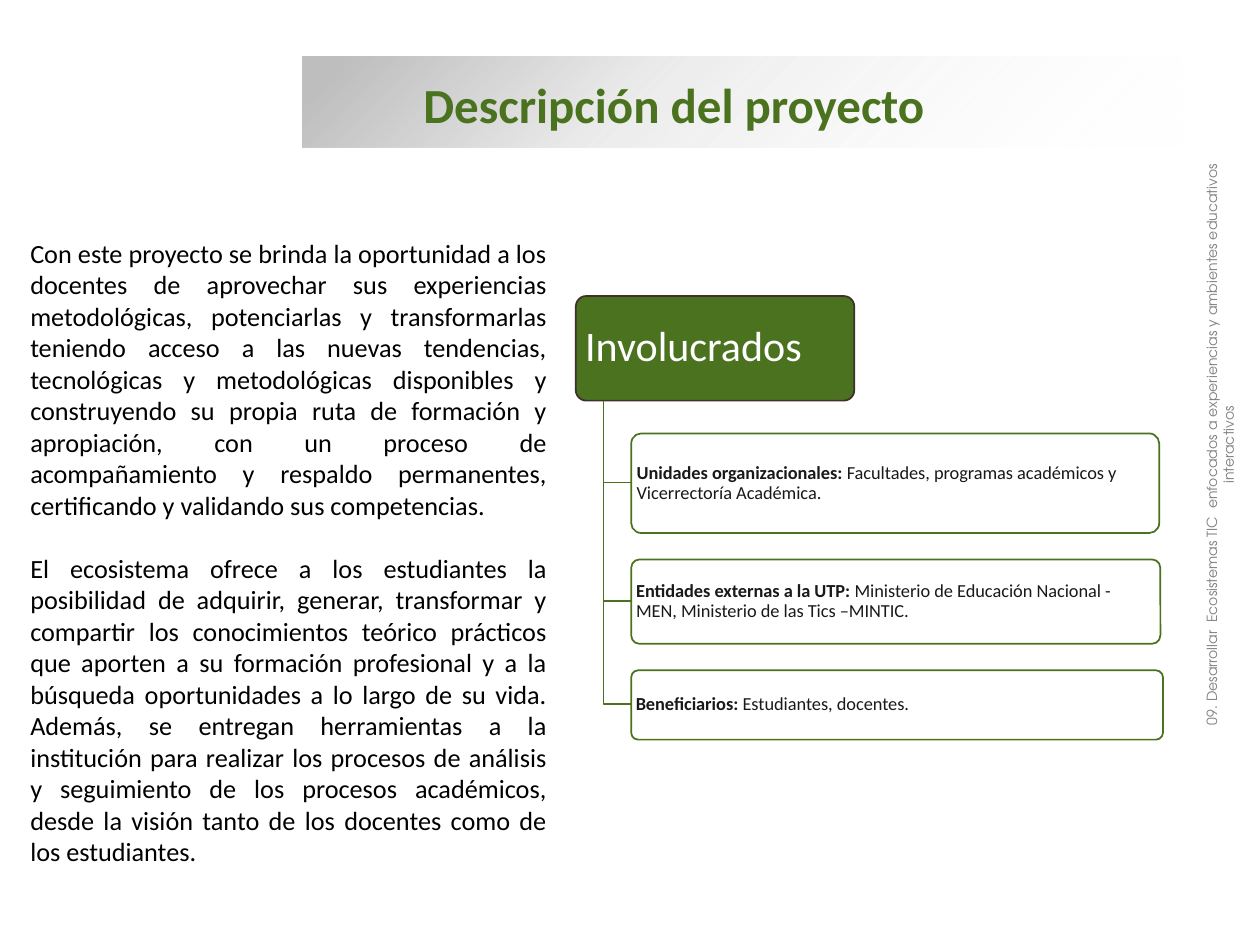
from lxml.etree import SubElement
from pptx import Presentation
from pptx.dml.color import RGBColor
from pptx.enum.shapes import MSO_SHAPE
from pptx.enum.text import MSO_ANCHOR, PP_ALIGN
from pptx.oxml import parse_xml
from pptx.oxml.ns import nsdecls, qn
from pptx.util import Pt

PX = 9144  # 100 px to the inch
COLORS = {"green": "4B731F", "brown": "3F3029", "white": "FFFFFF", "black": "000000",
          "ink": "191919", "gray": "808080", "silver": "BFBFBF"}

BODY = [
    "Con este proyecto se brinda la oportunidad a los docentes de aprovechar sus experiencias "
    "metodológicas, potenciarlas y transformarlas teniendo acceso a las nuevas tendencias, "
    "tecnológicas y metodológicas disponibles y construyendo su propia ruta de formación y "
    "apropiación, con un proceso de acompañamiento y respaldo permanentes, certificando y "
    "validando sus competencias.",
    "El ecosistema ofrece a los estudiantes la posibilidad de adquirir, generar, transformar y "
    "compartir los conocimientos teórico prácticos que aporten a su formación profesional y a la "
    "búsqueda oportunidades a lo largo de su vida. Además, se entregan herramientas a la "
    "institución para realizar los procesos de análisis y seguimiento de los procesos académicos, "
    "desde la visión tanto de los docentes como de los estudiantes.",
]
# label, detail, width, height
GROUPS = [
    ("Unidades organizacionales: ",
     "Facultades, programas académicos y Vicerrectoría Académica.", 419, 79),
    ("Entidades externas a la UTP: ",
     "Ministerio de Educación Nacional - MEN, Ministerio de las Tics –MINTIC.", 420, 67),
    ("Beneficiarios: ", "Estudiantes, docentes.", 422, 55),
]
SIDE_TEXT = ("09. Desarrollar  Ecosistemas TIC  enfocados a experiencias y ambientes "
             "educativos interactivos")


def rgb(name):
    return RGBColor.from_string(COLORS[name])


def emu(*lengths):
    return [v * PX for v in lengths]


def set_all(obj, **values):
    for name, value in values.items():
        setattr(obj, name, value)


def place(sp, x, y, w, h):
    set_all(sp, left=x * PX, top=y * PX, width=w * PX, height=h * PX)


def set_frame(sp, anchor, inset_x=10, inset_y=5):
    tf = sp.text_frame
    set_all(tf, word_wrap=True, vertical_anchor=anchor,
            margin_left=inset_x * PX, margin_right=inset_x * PX,
            margin_top=inset_y * PX, margin_bottom=inset_y * PX)
    return tf


def add_run(p, text, size, color, bold=False, font="Calibri"):
    r = p.add_run()
    r.text = text
    set_all(r.font, name=font, size=Pt(size), bold=bold)
    r.font.color.rgb = rgb(color)


def set_line(sp, color):
    sp.shadow.inherit = False
    sp.line.color.rgb = rgb(color)
    sp.line.width = Pt(1)


def add_title(s, x, y, w, h):
    """Gradient band with the title placeholder over it."""
    band = s.shapes.add_shape(MSO_SHAPE.RECTANGLE, *emu(x, y, w, h))
    band.shadow.inherit = False
    band.line.fill.background()
    stops = "".join(
        f'<a:gs pos="{pos}000"><a:srgbClr val="{COLORS[color]}">'
        f'<a:alpha val="{alpha}000"/></a:srgbClr></a:gs>'
        for pos, color, alpha in [(5, "silver", 100), (37, "silver", 31), (100, "white", 0)])
    band.element.spPr.find(qn("a:prstGeom")).addnext(parse_xml(
        f'<a:gradFill {nsdecls("a")} rotWithShape="1"><a:gsLst>{stops}</a:gsLst>'
        '<a:lin ang="2700000" scaled="0"/></a:gradFill>'))

    title = s.shapes.title
    place(title, x + 86, y + 9, 620, 57)
    s.shapes._spTree.append(title.element)  # bring in front of the band
    p = set_frame(title, MSO_ANCHOR.MIDDLE).paragraphs[0]
    p.alignment = PP_ALIGN.LEFT
    add_run(p, "Descripción del proyecto", 28, "green", bold=True)


def add_body(s, x, y, w, h):
    body = s.placeholders[1]
    place(body, x, y, w, h)
    tf = set_frame(body, MSO_ANCHOR.TOP)
    for i, text in enumerate(BODY):
        p = tf.add_paragraph() if i else tf.paragraphs[0]
        pPr = p._p.get_or_add_pPr()
        pPr.set("marL", "0")
        pPr.set("indent", "0")
        SubElement(pPr, qn("a:buNone"))
        set_all(p, alignment=PP_ALIGN.JUSTIFY, space_before=Pt(18 if i else 0))
        add_run(p, text, 15, "black")


def add_box(s, x, y, w, h, fill, line, runs, inset_x, inset_y):
    sp = s.shapes.add_shape(MSO_SHAPE.ROUNDED_RECTANGLE, *emu(x, y, w, h))
    sp.adjustments[0] = 0.1
    sp.fill.solid()
    sp.fill.fore_color.rgb = rgb(fill)
    set_line(sp, line)
    p = set_frame(sp, MSO_ANCHOR.MIDDLE, inset_x, inset_y).paragraphs[0]
    set_all(p, alignment=PP_ALIGN.LEFT, line_spacing=0.9)
    for run in runs:
        add_run(p, *run)
    return sp


def add_elbow(s, x, y, w, h):
    """Line that goes down, then right."""
    builder = s.shapes.build_freeform(x, y, scale=PX)
    builder.add_line_segments([(x, y + h), (x + w, y + h)], close=False)
    sp = builder.convert_to_shape()
    sp.fill.background()
    set_line(sp, "green")


def add_hierarchy(s, x, y, w, h, gap=21):
    """Root box with the groups hanging below it."""
    add_box(s, x, y, w, h, "green", "brown", [("Involucrados", 24, "white")], 5, 3)
    spine, branch, bottom = x + 22, 22, y + h
    top = bottom + 26
    for label, detail, box_w, box_h in GROUPS:
        add_elbow(s, spine, bottom, branch, top + box_h // 2 - bottom)
        runs = [(label, 10.5, "ink", True), (detail, 10.5, "ink")]
        box = add_box(s, spine + branch, top, box_w, box_h, "white", "green", runs, 2, 2)
        color = box.element.spPr.find(qn("a:solidFill"))[0]
        SubElement(color, qn("a:alpha"), val="90000")
        top += box_h + gap


def add_side_text(s, x, y, w, h):
    tb = s.shapes.add_textbox(*emu(x, y, w, h))
    tb.rotation = 270
    p = set_frame(tb, MSO_ANCHOR.TOP).paragraphs[0]
    p.alignment = PP_ALIGN.CENTER
    add_run(p, SIDE_TEXT, 8, "gray", font="TeX Gyre Adventor")


def main():
    prs = Presentation()
    prs.slide_width, prs.slide_height = emu(1000, 750)
    s = prs.slides.add_slide(prs.slide_layouts[1])
    add_body(s, 14, 183, 430, 515)
    add_hierarchy(s, 457, 235, 221, 83)
    add_title(s, 240, 45, 698, 72)
    add_side_text(s, 733, 328, 484, 50)
    prs.save("out.pptx")


if __name__ == "__main__":
    main()
